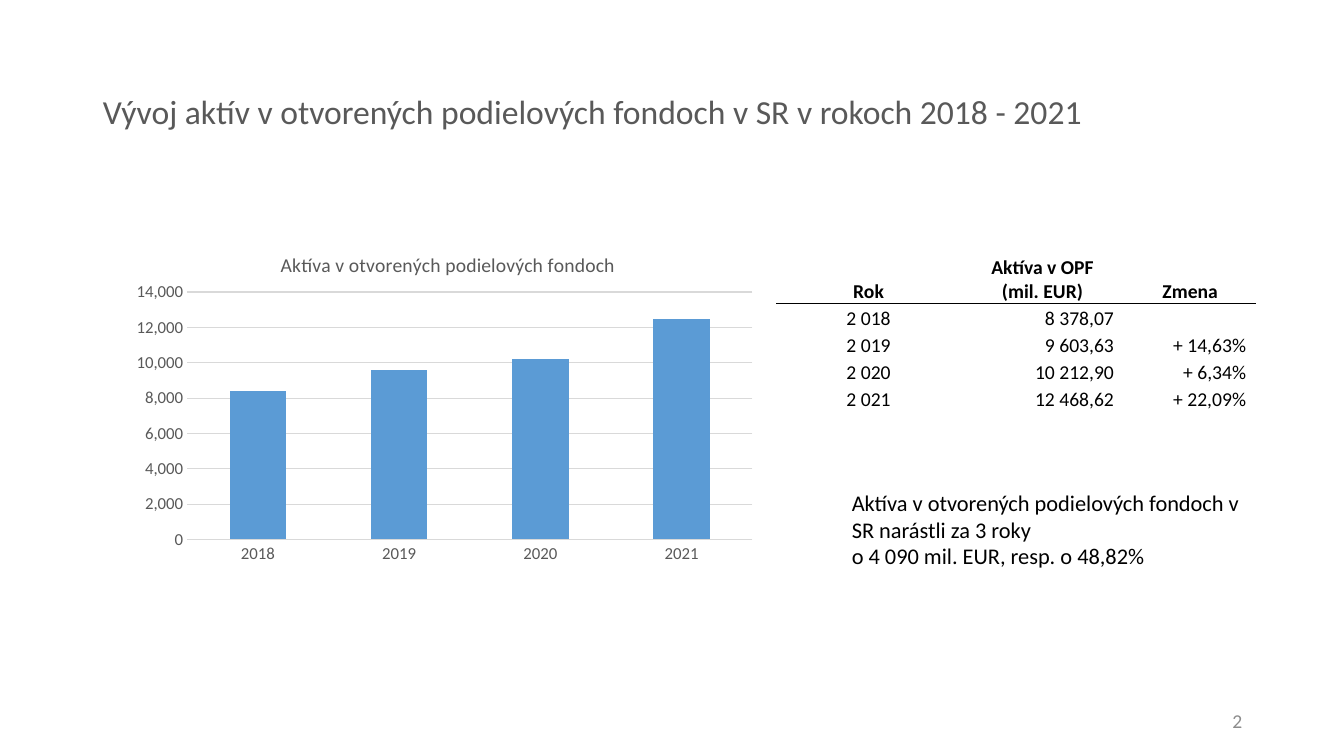
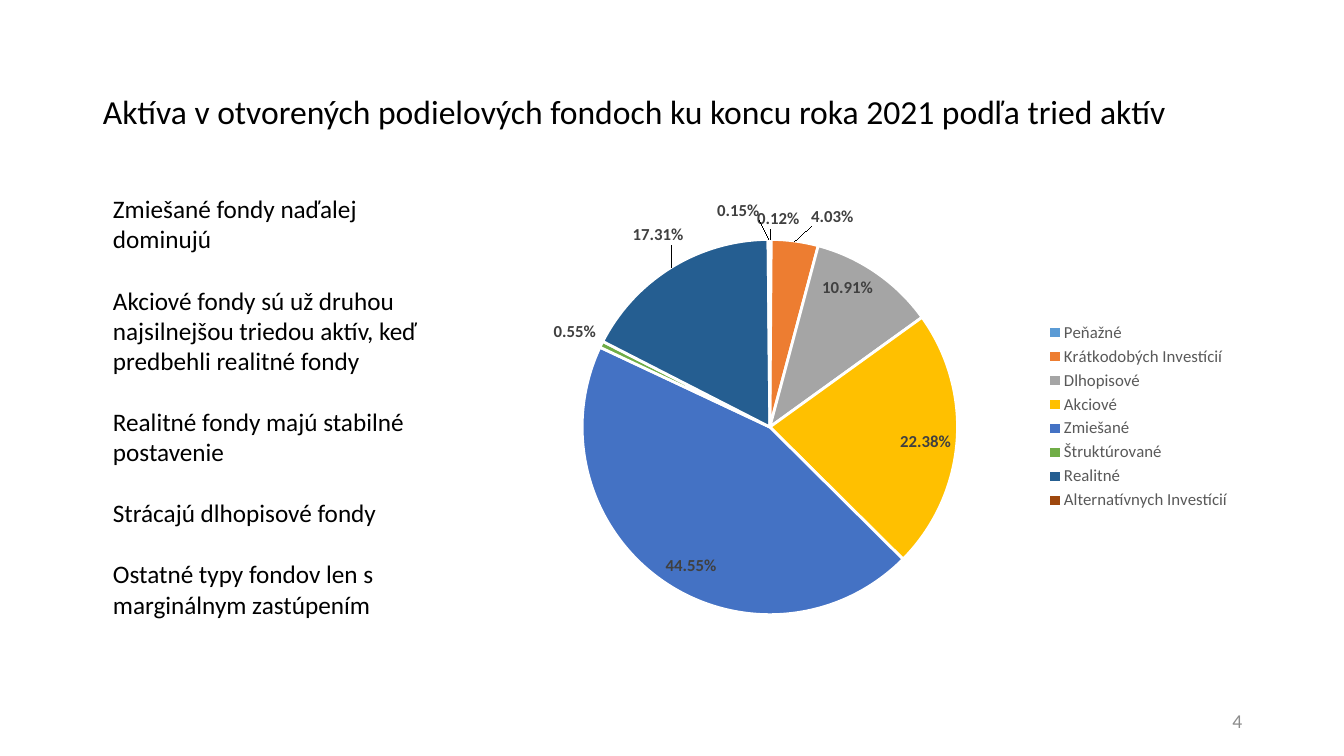
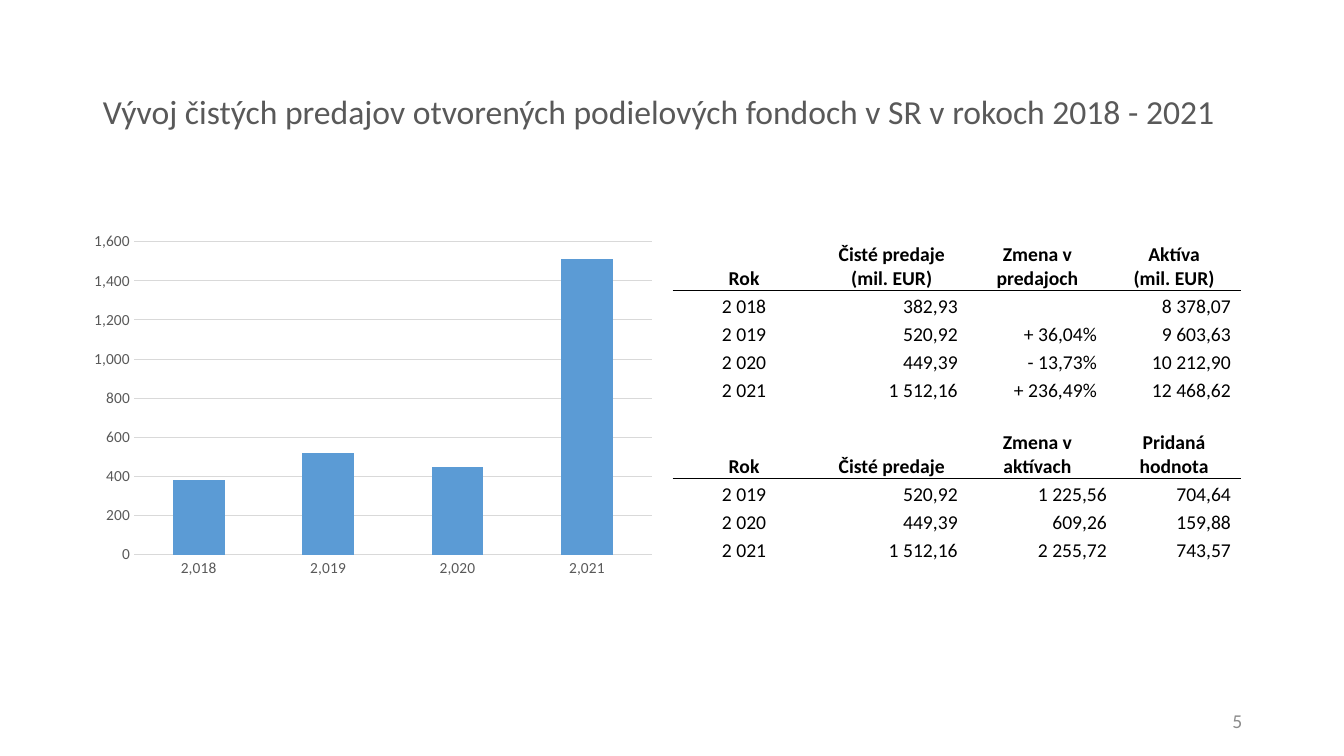
import pptx
import pptx.chart.data
import pptx.dml.color
import pptx.enum.chart
import pptx.enum.text
import pptx.oxml.ns
import pptx.util
import lxml.etree

Inches = pptx.util.Inches
Pt = pptx.util.Pt
qn = pptx.oxml.ns.qn
ALIGN = pptx.enum.text.PP_ALIGN
ANCHOR = pptx.enum.text.MSO_ANCHOR
CHART = pptx.enum.chart.XL_CHART_TYPE
LABEL = pptx.enum.chart.XL_LABEL_POSITION

FONT = "Calibri"
BLACK, GREY, PALE, GRID, WHITE = "000000", "595959", "8C8C8C", "D9D9D9", "FFFFFF"
BLUE = "5B9BD5"
NO_STYLE = "{2D5ABB26-0587-4C30-8999-92F81FD0307C}"
YEARS = ["2018", "2019", "2020", "2021"]
FUNDS = [
    ("Peňažné", 0.12, BLUE),
    ("Krátkodobých Investícií", 4.03, "ED7D31"),
    ("Dlhopisové", 10.91, "A5A5A5"),
    ("Akciové", 22.38, "FFC000"),
    ("Zmiešané", 44.55, "4472C4"),
    ("Štruktúrované", 0.55, "70AD47"),
    ("Realitné", 17.31, "255E91"),
    ("Alternatívnych Investícií", 0.15, "9E480E"),
]
LABEL_SHIFTS = {0: (0.01, -0.01), 1: (0.02, -0.02), 5: (0, 0), 6: (0.02, -0.04), 7: (-0.04, -0.03)}
ASSETS = [
    ["Rok", "Aktíva v OPF\n(mil. EUR)", "Zmena"],
    ["2 018", "8 378,07", ""],
    ["2 019", "9 603,63", "+ 14,63%"],
    ["2 020", "10 212,90", "+ 6,34%"],
    ["2 021", "12 468,62", "+ 22,09%"],
]
SALES = [
    ["Rok", "Čisté predaje\n(mil. EUR)", "Zmena v predajoch", "Aktíva\n(mil. EUR)"],
    ["2 018", "382,93", "", "8 378,07"],
    ["2 019", "520,92", "+ 36,04%", "9 603,63"],
    ["2 020", "449,39", "- 13,73%", "10 212,90"],
    ["2 021", "1 512,16", "+ 236,49%", "12 468,62"],
    ["", "", "", ""],
    ["Rok", "Čisté predaje", "Zmena v aktívach", "Pridaná hodnota"],
    ["2 019", "520,92", "1 225,56", "704,64"],
    ["2 020", "449,39", "609,26", "159,88"],
    ["2 021", "1 512,16", "2 255,72", "743,57"],
]


def rgb(color):
    """Return the colour of a hex string."""
    return pptx.dml.color.RGBColor.from_string(color)


def style(font, size, color, bold=False):
    """Set face, size, colour and weight of a font."""
    font.name, font.size, font.bold = FONT, Pt(size), bold
    font.color.rgb = rgb(color)


def place(sp, at):
    """Move a shape to left, top, width, height in inches."""
    sp.left, sp.top, sp.width, sp.height = map(Inches, at)


def write(tf, text, size, color, bold=False, align=ALIGN.LEFT):
    """Fill a text frame and format its runs."""
    tf.word_wrap = True
    tf.text = text
    for p in tf.paragraphs:
        p.alignment = align
        for r in p.runs:
            style(r.font, size, color, bold)


def add_text(slide, at, text, size, color, align=ALIGN.LEFT, anchor=ANCHOR.TOP):
    """Add a text box."""
    tf = slide.shapes.add_textbox(*map(Inches, at)).text_frame
    write(tf, text, size, color, align=align)
    tf.vertical_anchor = anchor


def add_slide(prs, layout, title, number, color=GREY, width=11.94):
    """Add a slide with its title and page number."""
    slide = prs.slides.add_slide(prs.slide_layouts[layout])
    sp = slide.shapes.title
    place(sp, (0.92, 0.4, width, 1.45))
    tf = sp.text_frame
    write(tf, title, 24, color)
    tf.auto_size = pptx.enum.text.MSO_AUTO_SIZE.NONE
    tf.vertical_anchor = ANCHOR.MIDDLE
    tf.paragraphs[0].line_spacing = 0.9
    add_text(slide, (9.42, 6.95, 3, 0.4), number, 14, PALE, ALIGN.RIGHT, ANCHOR.MIDDLE)
    return slide


def fill_body(slide, at, items):
    """Write plain spaced paragraphs into the body placeholder."""
    sp = slide.placeholders[1]
    place(sp, at)
    tf = sp.text_frame
    write(tf, "\n".join(items), 18, BLACK)
    tf.auto_size = pptx.enum.text.MSO_AUTO_SIZE.NONE
    for i, p in enumerate(tf.paragraphs):
        p.space_before = Pt(22 if i else 0)
        pPr = p._p.get_or_add_pPr()
        pPr.set("marL", "0")
        pPr.set("indent", "0")
        lxml.etree.SubElement(pPr, qn("a:buNone"))


def underline(cell):
    """Draw a thin black line below a cell."""
    tcPr = cell._tc.get_or_add_tcPr()
    ln = lxml.etree.SubElement(tcPr, qn("a:lnB"), w=str(Pt(0.5)))
    tcPr.insert(0, ln)
    fill = lxml.etree.SubElement(ln, qn("a:solidFill"))
    lxml.etree.SubElement(fill, qn("a:srgbClr"), val=BLACK)


def fill_cell(cell, text, header, first, inset):
    """Write and format one table cell."""
    cell.margin_left = cell.margin_top = cell.margin_bottom = 0
    cell.margin_right = Inches(inset)
    cell.vertical_anchor = ANCHOR.BOTTOM
    cell.fill.background()
    align = ALIGN.CENTER if header or first else ALIGN.RIGHT
    write(cell.text_frame, text, 14, BLACK, header, align)
    if not text:
        lxml.etree.SubElement(cell.text_frame.paragraphs[0]._p, qn("a:endParaRPr"), sz="1400")
    if header:
        underline(cell)


def add_table(slide, at, widths, heights, rows, flush=()):
    """Add an unstyled table; flush cells have no right inset."""
    frame = slide.shapes.add_table(len(rows), len(widths), *map(Inches, at))
    table = frame.table
    table._tbl.xpath(".//a:tableStyleId")[0].text = NO_STYLE
    table.first_row = table.horz_banding = False
    for column, width in zip(table.columns, widths):
        column.width = Inches(width)
    for i, (row, height) in enumerate(zip(rows, heights)):
        table.rows[i].height = Inches(height)
        header = row[0] == "Rok"
        for j, text in enumerate(row):
            inset = 0 if header or j == 0 or (i, j) in flush else 0.1
            fill_cell(table.cell(i, j), text, header, j == 0, inset)


def set_layout(parent, index, inner=False, edge=True, **sizes):
    """Give a chart part a manual layout in fractions of the chart."""
    for old in parent.findall(qn("c:layout")):
        parent.remove(old)
    layout = lxml.etree.SubElement(parent, qn("c:layout"))
    parent.insert(index, layout)
    manual = lxml.etree.SubElement(layout, qn("c:manualLayout"))
    values = {"layoutTarget": "inner"} if inner else {}
    if edge:
        values.update(xMode="edge", yMode="edge")
    values.update(sizes)
    for name, value in values.items():
        lxml.etree.SubElement(manual, qn("c:" + name), val=str(value))


def add_chart(slide, kind, at, cats, vals, plot):
    """Add a one-series chart with a fixed plot area."""
    data = pptx.chart.data.CategoryChartData()
    data.categories = cats
    data.add_series("Series 1", vals)
    chart = slide.shapes.add_chart(kind, *map(Inches, at), data).chart
    chart.has_title = chart.has_legend = False
    style(chart.font, 10, BLACK)
    x, y, w, h = plot
    set_layout(chart.element.xpath(".//c:plotArea")[0], 0, inner=True, x=x, y=y, w=w, h=h)
    return chart


def add_columns(slide, kind, at, cats, vals, plot, size, top, step):
    """Add a column chart with light gridlines."""
    chart = add_chart(slide, kind, at, cats, vals, plot)
    bars = chart.plots[0]
    bars.gap_width = 150
    bars.vary_by_categories = False
    fill = bars.series[0].format.fill
    fill.solid()
    fill.fore_color.rgb = rgb(BLUE)
    for axis in (chart.category_axis, chart.value_axis):
        axis.major_tick_mark = axis.minor_tick_mark = pptx.enum.chart.XL_TICK_MARK.NONE
        axis.format.line.fill.background()
        style(axis.tick_labels.font, size, GREY)
    axis = chart.value_axis
    axis.minimum_scale, axis.maximum_scale, axis.major_unit = 0, top, step
    axis.tick_labels.number_format = "#,##0"
    axis.tick_labels.number_format_is_linked = False
    line = axis.major_gridlines.format.line
    line.color.rgb = rgb(GRID)
    line.width = Pt(0.75)
    return chart


def add_chart_title(chart, text, x, y):
    """Put a title at a fixed place in a chart."""
    chart.has_title = True
    write_title = chart.chart_title.text_frame
    write_title.text = text
    style(write_title.paragraphs[0].runs[0].font, 14, GREY)
    set_layout(chart.element.xpath("./c:chart/c:title")[0], 1, x=x, y=y)


def add_pie(slide, at, plot):
    """Add the pie of fund classes with percent labels and a legend."""
    names, shares, colors = zip(*FUNDS)
    chart = add_chart(slide, CHART.PIE, at, names, shares, plot)
    chart.has_legend = True
    chart.legend.position = pptx.enum.chart.XL_LEGEND_POSITION.RIGHT
    chart.legend.include_in_layout = False
    style(chart.legend.font, 12, GREY)
    chart.plots[0].vary_by_categories = True
    series = chart.plots[0].series[0]
    labels = series.data_labels
    labels.show_percentage, labels.show_value = True, False
    labels.number_format, labels.number_format_is_linked = "0.00%", False
    labels.position = LABEL.INSIDE_END
    style(labels.font, 12, "404040", True)
    for i, color in enumerate(colors):
        point = series.points[i]
        point.format.fill.solid()
        point.format.fill.fore_color.rgb = rgb(color)
        point.format.line.color.rgb = rgb(WHITE)
        point.format.line.width = Pt(2)
        if i in LABEL_SHIFTS:
            style(point.data_label.font, 12, "404040", True)
            point.data_label.position = LABEL.OUTSIDE_END
    for dLbl, shift in zip(chart.element.xpath(".//c:dLbl"), LABEL_SHIFTS.values()):
        dLbl.find(qn("c:showVal")).set("val", "0")
        dLbl.find(qn("c:showPercent")).set("val", "1")
        numFmt = lxml.etree.SubElement(dLbl, qn("c:numFmt"), formatCode="0.00%", sourceLinked="0")
        dLbl.insert(1, numFmt)
        if any(shift):
            set_layout(dLbl, 1, edge=False, x=shift[0], y=shift[1])


def add_assets_slide(prs):
    """Build the slide on assets by year."""
    slide = add_slide(prs, 5, "Vývoj aktív v otvorených podielových fondoch v SR v rokoch 2018 - 2021", "2")
    add_table(slide, (7.7, 2.09, 4.76, 2), (1.83, 1.62, 1.31), [0.92] + [0.27] * 4, ASSETS)
    add_text(slide, (8.35, 4.8, 4.11, 0.91),
             "Aktíva v otvorených podielových fondoch v SR narástli za 3 roky\n"
             "o 4 090 mil. EUR, resp. o 48,82%", 16, BLACK)
    chart = add_columns(slide, CHART.COLUMN_CLUSTERED, (1.22, 2.25, 6.37, 3.41), YEARS,
                        (8400, 9600, 10200, 12500), (0.1, 0.19, 0.88, 0.72), 12, 14000, 2000)
    add_chart_title(chart, "Aktíva v otvorených podielových fondoch", 0.24, 0.06)


def add_classes_slide(prs):
    """Build the slide on asset classes."""
    slide = add_slide(prs, 1, "Aktíva v otvorených podielových fondoch ku koncu roka 2021 podľa tried aktív",
                      "4", BLACK, 11.5)
    fill_body(slide, (1.02, 1.87, 3.25, 4.34), [
        "Zmiešané fondy naďalej dominujú",
        "Akciové fondy sú už druhou najsilnejšou triedou aktív, keď predbehli realitné fondy",
        "Realitné fondy majú stabilné postavenie",
        "Strácajú dlhopisové fondy",
        "Ostatné typy fondov len s marginálnym zastúpením",
    ])
    add_pie(slide, (4.71, 1.98, 7.6, 4.3), (0.14, 0.09, 0.49, 0.87))


def add_sales_slide(prs):
    """Build the slide on net sales."""
    slide = add_slide(prs, 5, "Vývoj čistých predajov otvorených podielových fondoch v SR v rokoch 2018 - 2021", "5")
    chart = add_columns(slide, CHART.COLUMN_STACKED, (0.81, 2.22, 5.77, 3.57),
                        [f"{int(year):,}" for year in YEARS], (380, 520, 450, 1510),
                        (0.09, 0.05, 0.89, 0.87), 11, 1600, 200)
    chart.plots[0].overlap = 100
    add_table(slide, (6.67, 2.32, 5.64, 3.26), (1.42, 1.51, 1.38, 1.33),
              [0.56] + [0.28] * 5 + [0.45] + [0.28] * 3, SALES, {(i, 2) for i in (7, 8, 9)})


def main():
    """Build and save the presentation."""
    prs = pptx.Presentation()
    prs.slide_width, prs.slide_height = Inches(13.33), Inches(7.5)
    add_assets_slide(prs)
    add_classes_slide(prs)
    add_sales_slide(prs)
    prs.save("out.pptx")


if __name__ == "__main__":
    main()
